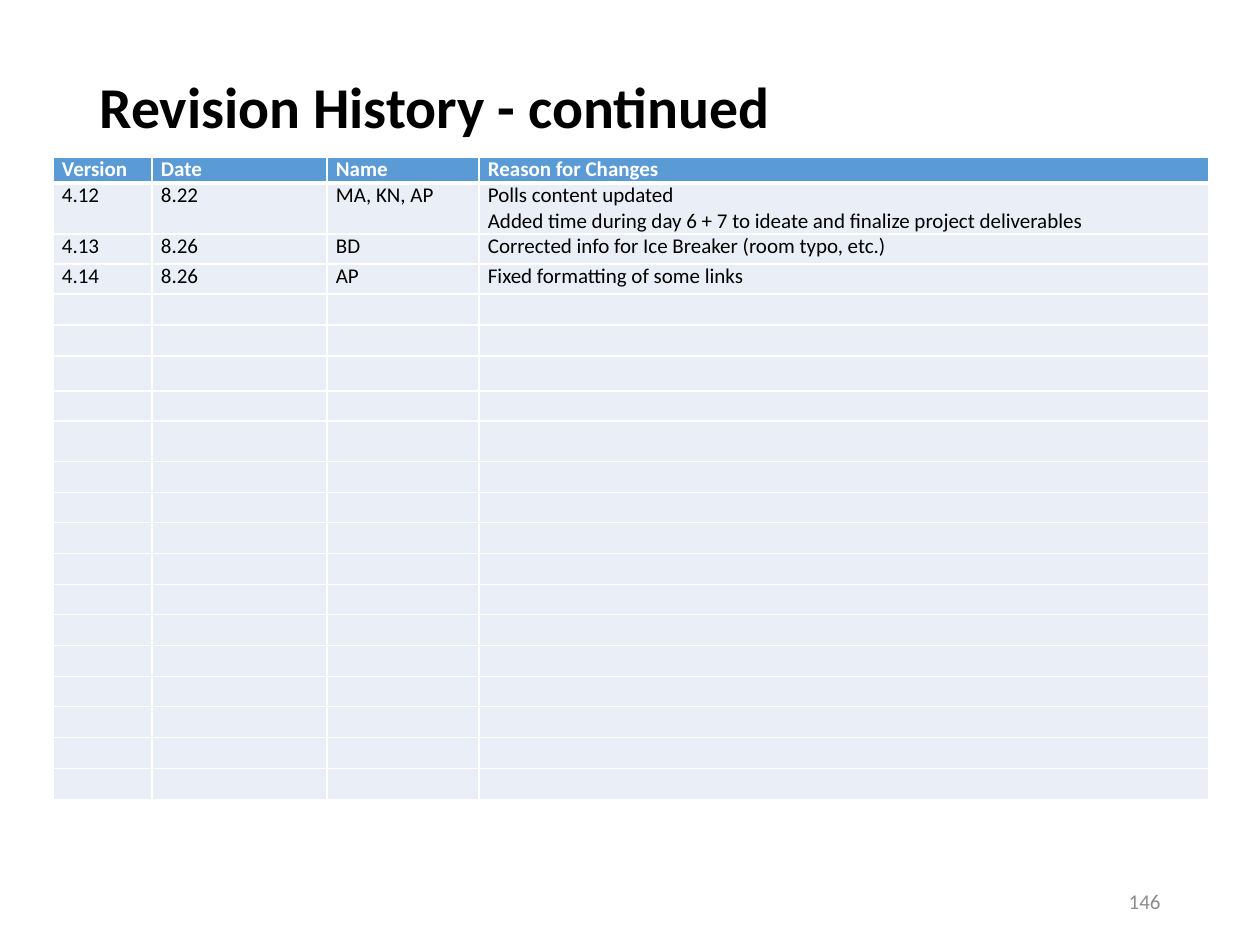
from lxml.etree import SubElement
from pptx import Presentation
from pptx.dml.color import RGBColor
from pptx.enum.text import MSO_ANCHOR as Anchor, PP_ALIGN as Align
from pptx.oxml.ns import qn
from pptx.util import Emu, Pt

PX = 914400 // 126
FONT = "Calibri"
BLACK = RGBColor(0x00, 0x00, 0x00)
WHITE = RGBColor(0xFF, 0xFF, 0xFF)
GRAY = RGBColor(0x8C, 0x8C, 0x8C)
HEADER_BLUE = RGBColor(0x5B, 0x9B, 0xD5)
ROW_BLUE = RGBColor(0xEA, 0xEF, 0xF7)

COLUMN_WIDTHS = [99, 175, 152, 730]
ROW_HEIGHTS = [26, 51, 30, 30, 31, 31, 35, 30, 41] + [31, 30, 31] * 3 + [31, 31]
REVISIONS = [
    ["Version", "Date", "Name", "Reason for Changes"],
    ["4.12", "8.22", "MA, KN, AP",
     "Polls content updated\n"
     "Added time during day 6 + 7 to ideate and finalize project deliverables"],
    ["4.13", "8.26", "BD", "Corrected info for Ice Breaker (room typo, etc.)"],
    ["4.14", "8.26", "AP", "Fixed formatting of some links"],
]


def px(length):
    return Emu(length * PX)


def apply(target, values):
    for name, value in values.items():
        setattr(target, name, value)


class SlideBuilder:
    def __init__(self, slide, font=FONT):
        self.slide = slide
        self.font = font

    def fill_frame(self, frame, text, size, color, bold=False, **paragraph_format):
        frame.text = text
        for paragraph in frame.paragraphs:
            apply(paragraph, paragraph_format)
            for run in paragraph.runs:
                apply(run.font, {"name": self.font, "size": Pt(size), "bold": bold})
                run.font.color.rgb = color
            if not paragraph.runs:
                # An empty cell needs a small text size to keep its row low
                SubElement(paragraph._p, qn("a:endParaRPr"), sz=str(size * 100))

    def text(self, box, text, size, color, bold=False, frame_format=None, **paragraph_format):
        frame = self.slide.shapes.add_textbox(*map(px, box)).text_frame
        apply(frame, {"word_wrap": True, "vertical_anchor": Anchor.MIDDLE,
                      **(frame_format or {})})
        self.fill_frame(frame, text, size, color, bold, **paragraph_format)

    def border(self, cell, side, points):
        line = SubElement(cell._tc.get_or_add_tcPr(), qn(f"a:ln{side}"), w=str(Pt(points)))
        fill = SubElement(line, qn("a:solidFill"))
        SubElement(fill, qn("a:srgbClr"), val=str(WHITE))

    def cell(self, cell, text, header, below_header):
        apply(cell, {"margin_left": px(9), "margin_right": px(9),
                     "margin_top": 0, "margin_bottom": 0})
        for side in "LRTB":
            thick = (header and side == "B") or (below_header and side == "T")
            self.border(cell, side, 3 if thick else 1)
        cell.fill.solid()
        cell.fill.fore_color.rgb = HEADER_BLUE if header else ROW_BLUE
        self.fill_frame(cell.text_frame, text, 12, WHITE if header else BLACK, bold=header)

    def table(self, left, top, widths, heights, rows):
        box = (left, top, sum(widths), sum(heights))
        table = self.slide.shapes.add_table(len(heights), len(widths), *map(px, box)).table
        table.horz_banding = False
        for column, width in zip(table.columns, widths):
            column.width = px(width)
        for r, height in enumerate(heights):
            table.rows[r].height = px(height)
            texts = rows[r] if r < len(rows) else [""] * len(widths)
            for c, text in enumerate(texts):
                self.cell(table.cell(r, c), text, header=r == 0, below_header=r == 1)


def main():
    presentation = Presentation()
    apply(presentation, {"slide_width": px(1260), "slide_height": px(945)})
    builder = SlideBuilder(presentation.slides.add_slide(presentation.slide_layouts[6]))

    # Title
    builder.text((87, 50, 1086, 183), "Revision History - continued", 33, BLACK, bold=True,
                 frame_format={"vertical_anchor": Anchor.TOP, "margin_top": px(29)},
                 line_spacing=0.9)

    # Revision table
    builder.table(53, 157, COLUMN_WIDTHS, ROW_HEIGHTS, REVISIONS)

    # Page number
    builder.text((890, 876, 283, 50), "146", 12, GRAY, alignment=Align.RIGHT)

    presentation.save("out.pptx")


if __name__ == "__main__":
    main()
